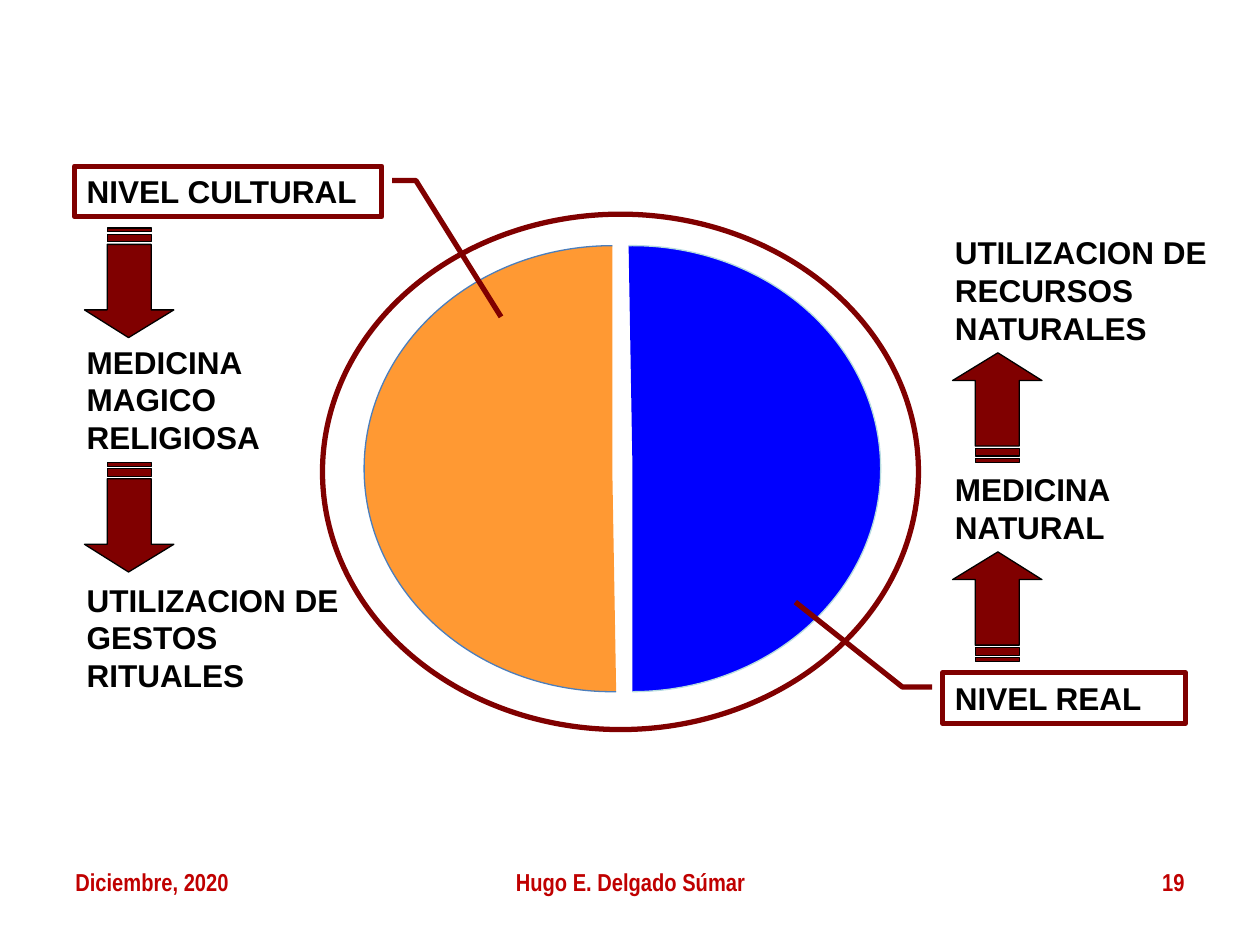
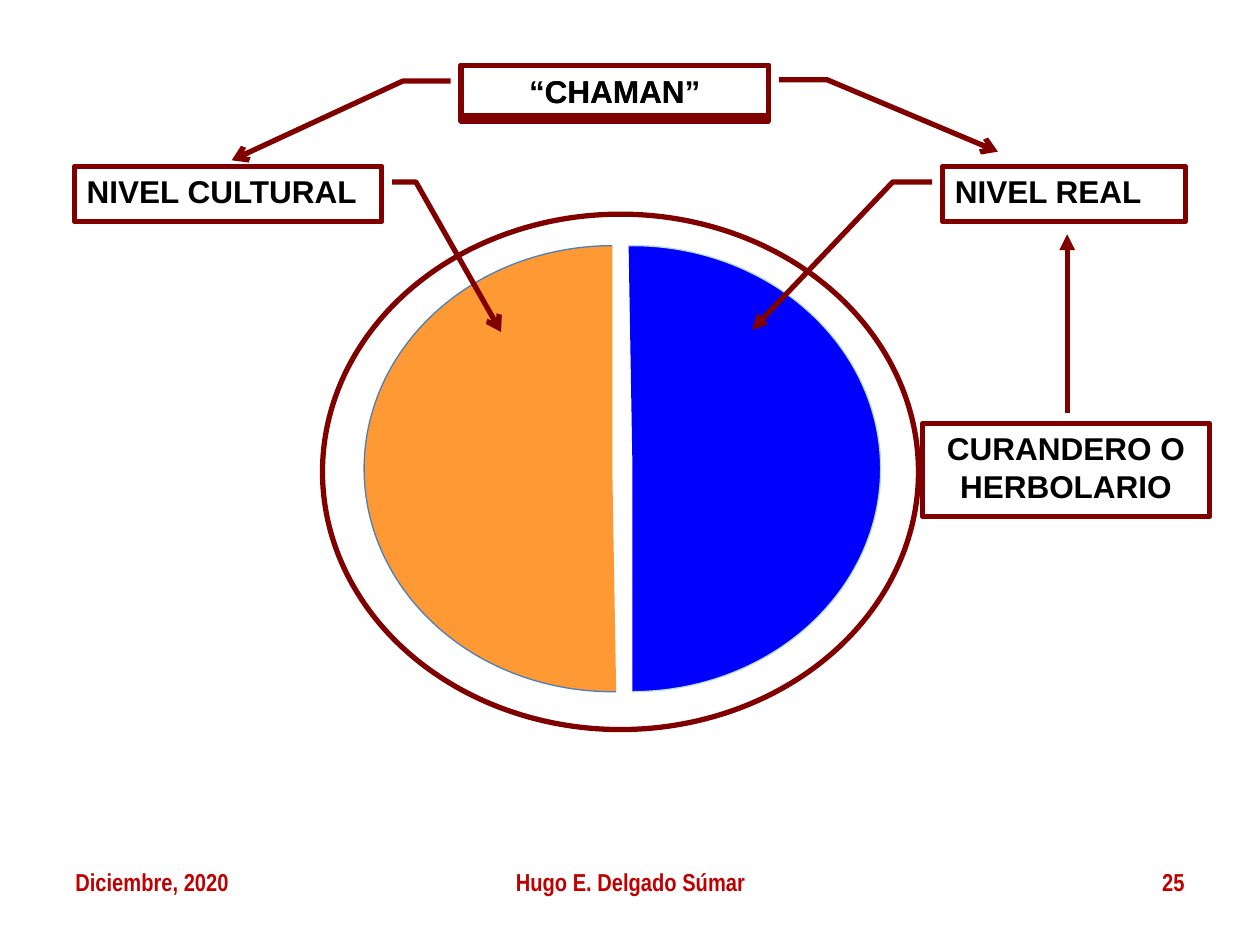
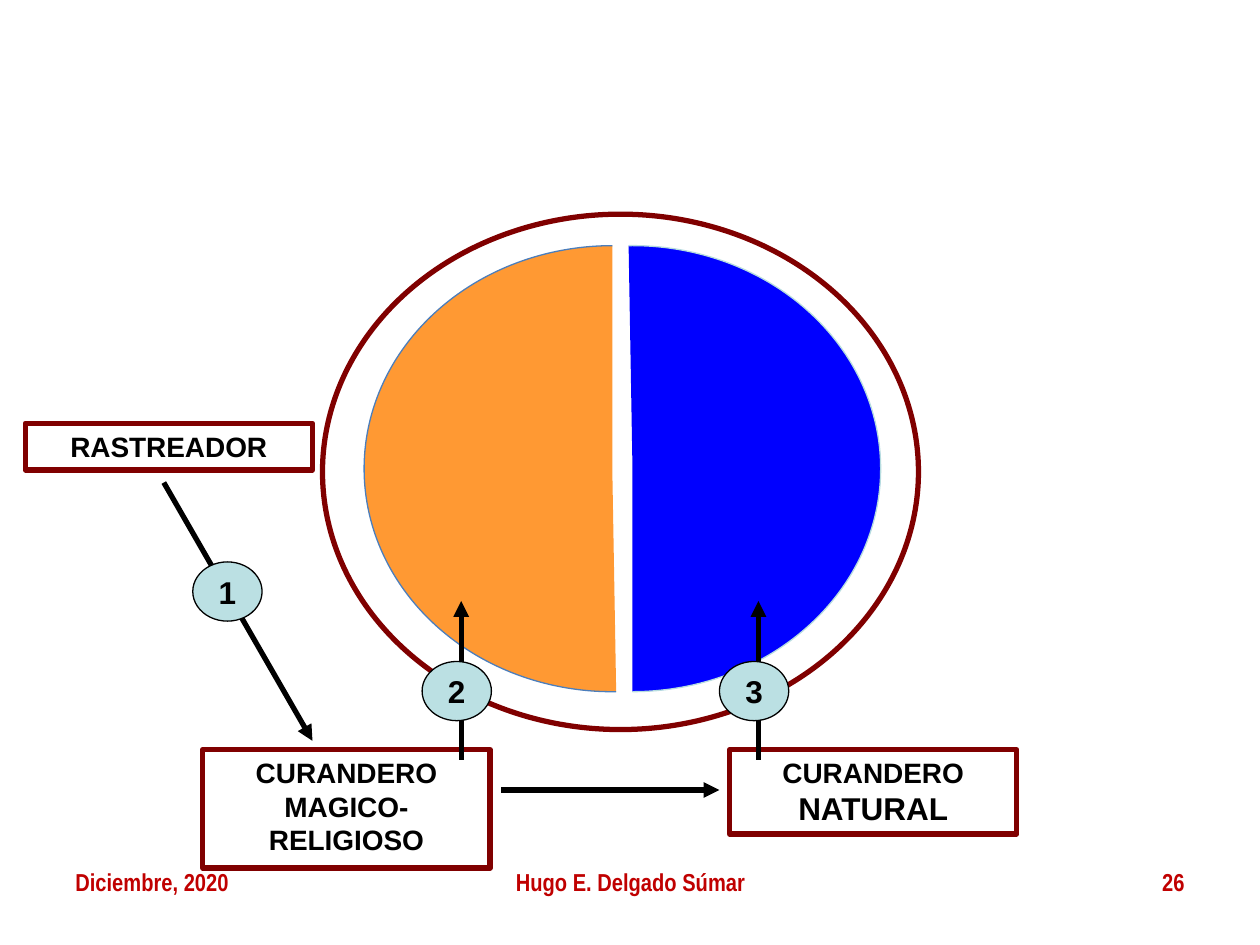
"""Build three slides on the cultural and real levels of traditional medicine."""
from dataclasses import dataclass

from lxml.etree import SubElement
from pptx import Presentation
from pptx.dml.color import RGBColor as RGB
from pptx.enum.shapes import MSO_CONNECTOR as CONN, MSO_SHAPE as SHAPE
from pptx.enum.text import MSO_ANCHOR as ANCHOR, PP_ALIGN as ALIGN
from pptx.oxml.ns import qn
from pptx.util import Inches, Pt


@dataclass(frozen=True)
class Theme:
    """Colours, fonts and sizes shared by all slides."""
    maroon: str = "800000"
    black: str = "000000"
    orange: str = "FF9933"
    orange_edge: str = "4B7EBC"
    blue: str = "0000FF"
    blue_edge: str = "B6DCDF"
    badge: str = "BBE0E3"
    footer: str = "C00000"
    font: str = "Arial"
    footer_font: str = "Arial Narrow"
    body: int = 18
    small: int = 16
    footer_size: int = 14
    thick: float = 3
    thin: float = 0.75


T = Theme()
ARROW_W, ARROW_H = 0.87, 0.71
ARROW_PARTS = (
    ((65, 0), (65, 18), (13, 18), (13, 53), (65, 53), (65, 71), (87, 36)),
    ((5, 18), (5, 53), (11, 53), (11, 18)),
    ((0, 18), (0, 53), (3, 53), (3, 18)),
)


def write(sp, text, size=T.body, color=T.black, font=T.font, align=ALIGN.LEFT,
          anchor=ANCHOR.TOP, wrap=True, last_size=None):
    """Fill a shape with bold text, one paragraph per line."""
    tf = sp.text_frame
    tf.word_wrap = wrap
    tf.vertical_anchor = anchor
    lines = text.split("\n")
    for i, line in enumerate(lines):
        p = tf.paragraphs[0] if i == 0 else tf.add_paragraph()
        p.alignment = align
        r = p.add_run()
        r.text = line
        last = last_size and i == len(lines) - 1
        r.font.size = Pt(last_size if last else size)
        r.font.name = font
        r.font.bold = True
        r.font.color.rgb = RGB.from_string(color)


def paint(sp, fill=None, line=T.maroon, width=T.thick):
    """Set fill and outline and remove the shadow."""
    sp.shadow.inherit = False
    if fill:
        sp.fill.solid()
        sp.fill.fore_color.rgb = RGB.from_string(fill)
    else:
        sp.fill.background()
    sp.line.color.rgb = RGB.from_string(line)
    sp.line.width = Pt(width)


def add_tip(sp, kind):
    """Put an arrowhead at the end of a line."""
    SubElement(sp.line._get_or_add_ln(), qn("a:tailEnd"), type=kind)


def add_text(slide, text, x, y, w, h, **fmt):
    """Add a plain text box."""
    sp = slide.shapes.add_textbox(Inches(x), Inches(y), Inches(w), Inches(h))
    write(sp, text, **fmt)


def add_preset(slide, kind, x, y, w, h, adj=(), flip=None, **look):
    """Add a painted preset shape."""
    sp = slide.shapes.add_shape(kind, Inches(x), Inches(y), Inches(w), Inches(h))
    for i, value in enumerate(adj):
        sp.adjustments[i] = value
    if flip:
        sp._element.spPr.find(qn("a:xfrm")).set(flip, "1")
    paint(sp, **look)
    return sp


def add_box(slide, text, x, y, h, **fmt):
    """Add a framed role box."""
    sp = add_preset(slide, SHAPE.RECTANGLE, x, y, 2.28, h)
    write(sp, text, align=ALIGN.CENTER, **fmt)


def add_callout(slide, text, x, y, w, h, adj, tip=None, flip=None, **fmt):
    """Add a framed label with a bent leader line."""
    sp = add_preset(slide, SHAPE.LINE_CALLOUT_2, x, y, w, h, adj, flip)
    if tip:
        add_tip(sp, tip)
    write(sp, text, **fmt)


def add_arrow(slide, x1, y1, x2, y2, color=T.black):
    """Add a straight line ending in a triangle."""
    cx = slide.shapes.add_connector(CONN.STRAIGHT, Inches(x1), Inches(y1),
                                    Inches(x2), Inches(y2))
    cx.line.color.rgb = RGB.from_string(color)
    cx.line.width = Pt(T.thick)
    add_tip(cx, "triangle")
    SubElement(cx._element.spPr, qn("a:effectLst"))


def add_step(slide, number, x, y, arrow):
    """Add an arrow with a numbered badge on it."""
    add_arrow(slide, *arrow)
    sp = add_preset(slide, SHAPE.OVAL, x, y, 0.55, 0.47, fill=T.badge,
                    line=T.black, width=T.thin)
    write(sp, number, align=ALIGN.CENTER, anchor=ANCHOR.MIDDLE, wrap=False)


def add_striped_arrow(slide, x, y, rotation):
    """Add a striped block arrow turned up or down."""
    fb = None
    for start, *rest in ARROW_PARTS:
        if fb is None:
            fb = slide.shapes.build_freeform(*start, scale=Inches(0.01))
        else:
            fb.move_to(*start)
        fb.add_line_segments(rest, close=True)
    sp = fb.convert_to_shape(Inches(x), Inches(y))
    sp.width, sp.height = Inches(ARROW_W), Inches(ARROW_H)
    sp.rotation = rotation
    paint(sp, T.maroon, T.black, T.thin)


def add_world(slide):
    """Add the ring with its cultural and real halves."""
    add_preset(slide, SHAPE.OVAL, 2.56, 1.7, 4.73, 4.09)
    for x, flip, fill, edge in ((2.89, "flipH", T.orange, T.orange_edge),
                                (3.05, "flipV", T.blue, T.blue_edge)):
        add_preset(slide, SHAPE.ARC, x, 1.95, 3.94, 3.54, (162, 54.591), flip,
                   fill=fill, line=edge, width=T.thin)


def add_cultural(slide, h, tip=None):
    """Add the cultural level callout."""
    add_callout(slide, "NIVEL CULTURAL", 0.59, 1.32, 2.44, h,
                (0.282, 1.034, 0.282, 1.111, 2.988, 1.388), tip)


def add_real(slide, y, h, bend, end, tip=None):
    """Add the real level callout."""
    add_callout(slide, "NIVEL REAL", 7.48, y, 1.93, h,
                (0.282, -0.043, 0.282, bend, *end), tip)


def add_footer(slide, number):
    """Add date, author and slide number."""
    for text, x, w, align in (("Diciembre, 2020", 0.5, 2.33, ALIGN.LEFT),
                              ("Hugo E. Delgado Súmar", 3.42, 3.17, ALIGN.CENTER),
                              (str(number), 7.17, 2.33, ALIGN.RIGHT)):
        add_text(slide, text, x, 6.83, w, 0.52, size=T.footer_size,
                 color=T.footer, font=T.footer_font, align=align)


def levels_slide(slide):
    """Show what each level leads to."""
    for text, x, y, w, h in (
            ("MEDICINA MAGICO RELIGIOSA", 0.59, 2.67, 2.44, 1),
            ("MEDICINA NATURAL", 7.48, 3.68, 1.81, 0.7),
            ("UTILIZACION DE GESTOS RITUALES", 0.59, 4.56, 2.44, 1),
            ("UTILIZACION DE RECURSOS NATURALES", 7.48, 1.8, 2.44, 1)):
        add_text(slide, text, x, y, w, h)
    for x, y, rotation in ((0.59, 1.89, 90), (0.59, 3.75, 90),
                           (7.48, 4.46, 270), (7.48, 2.88, 270)):
        add_striped_arrow(slide, x, y, rotation)
    add_world(slide)
    add_real(slide, 5.34, 0.4, -0.165, (-1.404, -0.605))
    add_cultural(slide, 0.4)


def shaman_slide(slide):
    """Show the shaman on both levels and the healer on one."""
    for text, h, flip in (("CHAMAN", 0.44, "flipH"), ("“CHAMAN”", 0.4, None)):
        add_callout(slide, text, 3.66, 0.52, 2.44, h,
                    (0.282, 1.034, 0.282, 1.19, 1.71, 1.746), "arrow", flip,
                    align=ALIGN.CENTER)
    add_world(slide)
    add_box(slide, "CURANDERO O HERBOLARIO", 7.32, 3.36, 0.74)
    add_arrow(slide, 8.47, 3.28, 8.47, 1.86, T.maroon)
    add_cultural(slide, 0.44, "arrow")
    add_real(slide, 1.32, 0.44, -0.204, (2.953, -0.783), "triangle")


def healers_slide(slide):
    """Show the path from tracker to healers in three steps."""
    add_world(slide)
    add_box(slide, "RASTREADOR", 0.2, 3.36, 0.37, size=T.small)
    add_box(slide, "CURANDERO\nMAGICO-RELIGIOSO", 1.61, 5.95, 0.94, size=T.small)
    add_box(slide, "CURANDERO\nNATURAL", 5.79, 5.95, 0.67, size=T.small,
            last_size=T.body)
    add_arrow(slide, 3.98, 6.27, 5.71, 6.27)
    add_step(slide, "1", 1.53, 4.46, (1.3, 3.83, 2.48, 5.88))
    for number, x in (("2", 3.66), ("3", 6.02)):
        add_step(slide, number, x - 0.31, 5.25, (x, 6.03, x, 4.77))


def main():
    """Build and save the slides."""
    prs = Presentation()
    prs.slide_width, prs.slide_height = Inches(10), Inches(7.5)
    for number, build in ((19, levels_slide), (25, shaman_slide),
                          (26, healers_slide)):
        slide = prs.slides.add_slide(prs.slide_layouts[6])
        build(slide)
        add_footer(slide, number)
    prs.save("out.pptx")


if __name__ == "__main__":
    main()
